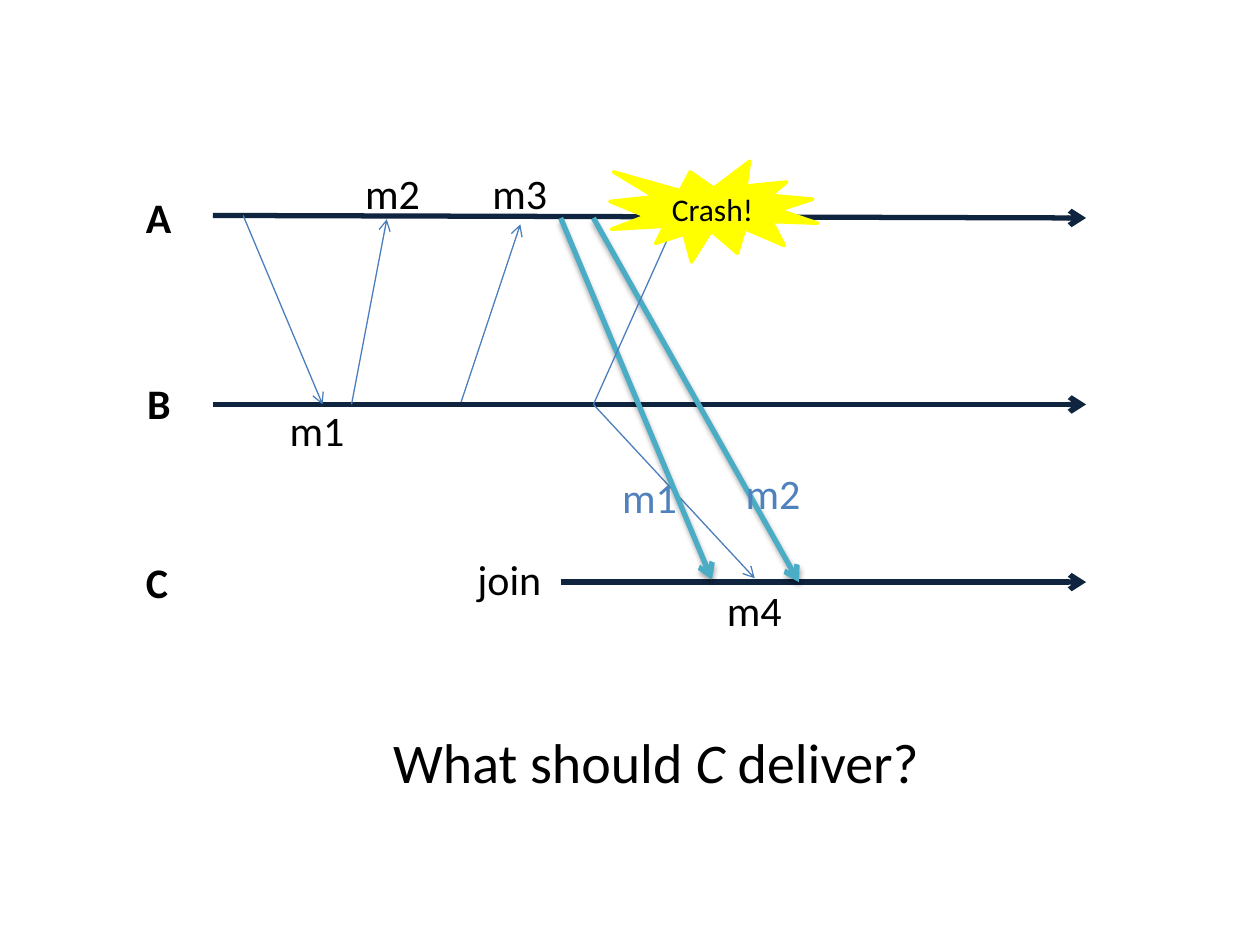
from dataclasses import dataclass
from typing import Optional

import pptx
import pptx.dml.color
import pptx.enum.shapes
import pptx.enum.text
import pptx.oxml
import pptx.oxml.ns
import pptx.util


@dataclass(frozen=True)
class Theme:
    font: str = "Calibri"
    text: str = "000000"
    timeline: str = "0F243E"
    message: str = "4B7EBC"
    resend: str = "4BACC6"
    resend_text: str = "4F81BD"
    crash: str = "FFFF00"
    label_size: int = 24
    question_size: int = 32
    crash_size: int = 18
    thick: float = 3
    thin: float = 0.75
    crash_outline: float = 2


@dataclass(frozen=True)
class Arrow:
    """An arrow between two (column, row) points."""
    start: tuple[float, float]
    end: tuple[float, float]
    color: str
    width: float
    shadow: bool = False


@dataclass(frozen=True)
class Label:
    text: str
    column: float
    row: float
    columns: float = 6.4
    color: str = "000000"
    bold: Optional[bool] = None


THEME = Theme()
COLUMNS, ROWS = 100, 75
SLIDE_WIDTH, SLIDE_HEIGHT = pptx.util.Inches(10), pptx.util.Inches(7.5)
LABEL_ROWS = 5

# Rows of the process timelines, and the columns where they end
A_ROW, B_ROW, C_ROW = 17.1, 32.1, 46.2
A_END_ROW = 17.3
LINE_START, JOIN, LINE_END = 16.9, 44.5, 86.2
M4_SENT = 47.1

TIMELINES = [
    Arrow(start, end, THEME.timeline, THEME.thick)
    for start, end in [
        ((LINE_START, A_ROW), (LINE_END, A_END_ROW)),
        ((LINE_START, B_ROW), (LINE_END, B_ROW)),
        ((JOIN, C_ROW), (LINE_END, C_ROW)),
    ]
]
MESSAGES = [
    Arrow(start, end, THEME.message, THEME.thin)
    for start, end in [
        ((19.3, A_ROW), (25.6, B_ROW)),
        ((27.9, B_ROW), (30.7, 17.4)),
        ((36.6, 31.9), (41.3, 17.8)),
        ((M4_SENT, B_ROW), (59.9, 45.9)),
    ]
]
LOST_MESSAGE = Arrow((M4_SENT, B_ROW), (53.5, 17.8), THEME.message, THEME.thin)
RESENDS = [
    (Arrow((JOIN, A_END_ROW), (56.5, 46), THEME.resend, THEME.thick, True),
     Label("m1", 48.4, 36.9, color=THEME.resend_text)),
    (Arrow((M4_SENT, A_END_ROW), (63.4, C_ROW), THEME.resend, THEME.thick, True),
     Label("m2", 58.2, 36.6, color=THEME.resend_text)),
]
LABELS = [
    Label("A", 10.6, 14.7, 4.1, bold=True),
    Label("B", 10.7, 29.5, 4, bold=True),
    Label("C", 10.6, 43.7, 3.8, bold=True),
    Label("join", 36.9, 43.4, 7.1),
    Label("m1", 22, 31.6),
    Label("m2", 28, 12.8),
    Label("m3", 38.1, 12.8),
    Label("m4", 56.7, 45.9),
]


def across(columns: float) -> int:
    return round(SLIDE_WIDTH * columns / COLUMNS)


def down(rows: float) -> int:
    return round(SLIDE_HEIGHT * rows / ROWS)


def rgb(color: str) -> pptx.dml.color.RGBColor:
    return pptx.dml.color.RGBColor.from_string(color)


def style_run(run, size: float, color: str, bold: Optional[bool] = None) -> None:
    run.font.name = THEME.font
    run.font.size = pptx.util.Pt(size)
    run.font.color.rgb = rgb(color)
    run.font.bold = bold


def draw_arrow(slide, arrow: Arrow) -> None:
    connector = slide.shapes.add_connector(
        pptx.enum.shapes.MSO_CONNECTOR.STRAIGHT,
        across(arrow.start[0]), down(arrow.start[1]),
        across(arrow.end[0]), down(arrow.end[1]))
    connector.line.color.rgb = rgb(arrow.color)
    connector.line.width = pptx.util.Pt(arrow.width)
    # Arrowhead and shadow have no public methods
    head = pptx.oxml.parse_xml(
        f'<a:tailEnd {pptx.oxml.ns.nsdecls("a")} type="arrow"/>')
    connector.line._get_or_add_ln().append(head)
    shadow = (
        f'<a:outerShdw blurRad="{pptx.util.Pt(3.1)}" dist="{pptx.util.Pt(1.8)}" '
        'dir="5400000" rotWithShape="0"><a:srgbClr val="000000">'
        '<a:alpha val="35000"/></a:srgbClr></a:outerShdw>'
    ) if arrow.shadow else ""
    connector._element.spPr.append(pptx.oxml.parse_xml(
        f'<a:effectLst {pptx.oxml.ns.nsdecls("a")}>{shadow}</a:effectLst>'))


def draw_label(slide, label: Label) -> None:
    box = slide.shapes.add_textbox(
        across(label.column), down(label.row),
        across(label.columns), down(LABEL_ROWS))
    frame = box.text_frame
    frame.text = label.text
    frame.word_wrap = False
    frame.auto_size = pptx.enum.text.MSO_AUTO_SIZE.SHAPE_TO_FIT_TEXT
    style_run(frame.paragraphs[0].runs[0], THEME.label_size, label.color, label.bold)


def write_question(slide) -> None:
    title = slide.shapes.title
    title.left, title.top = across(30.2), down(57.2)
    title.width, title.height = across(44.2), down(6.4)
    frame = title.text_frame
    frame.word_wrap = False
    frame.auto_size = pptx.enum.text.MSO_AUTO_SIZE.SHAPE_TO_FIT_TEXT
    frame.vertical_anchor = pptx.enum.text.MSO_ANCHOR.TOP
    paragraph = frame.paragraphs[0]
    paragraph.alignment = pptx.enum.text.PP_ALIGN.LEFT
    for text, italic in [("What should ", False), ("C", True), (" deliver?", False)]:
        run = paragraph.add_run()
        run.text = text
        style_run(run, THEME.question_size, THEME.text)
        run.font.italic = italic


def draw_crash(slide) -> None:
    crash = slide.shapes.add_shape(
        pptx.enum.shapes.MSO_SHAPE.EXPLOSION1,
        across(48.4), down(12.8), across(16.5), down(8))
    crash.shadow.inherit = False
    crash.fill.solid()
    crash.fill.fore_color.rgb = rgb(THEME.crash)
    crash.line.color.rgb = rgb(THEME.crash)
    crash.line.width = pptx.util.Pt(THEME.crash_outline)
    frame = crash.text_frame
    frame.text = "Crash!"
    frame.vertical_anchor = pptx.enum.text.MSO_ANCHOR.MIDDLE
    frame.paragraphs[0].alignment = pptx.enum.text.PP_ALIGN.CENTER
    style_run(frame.paragraphs[0].runs[0], THEME.crash_size, THEME.text)


def main() -> None:
    deck = pptx.Presentation()
    deck.slide_width, deck.slide_height = SLIDE_WIDTH, SLIDE_HEIGHT
    slide = deck.slides.add_slide(deck.slide_layouts.get_by_name("Title Only"))

    write_question(slide)
    # Timelines, messages and their names
    for arrow in TIMELINES + MESSAGES:
        draw_arrow(slide, arrow)
    for label in LABELS:
        draw_label(slide, label)
    # Messages sent again to the joining process
    for arrow, label in RESENDS:
        draw_arrow(slide, arrow)
        draw_label(slide, label)
    # The crash covers the end of the lost message
    draw_arrow(slide, LOST_MESSAGE)
    draw_crash(slide)

    deck.save("out.pptx")


if __name__ == "__main__":
    main()
